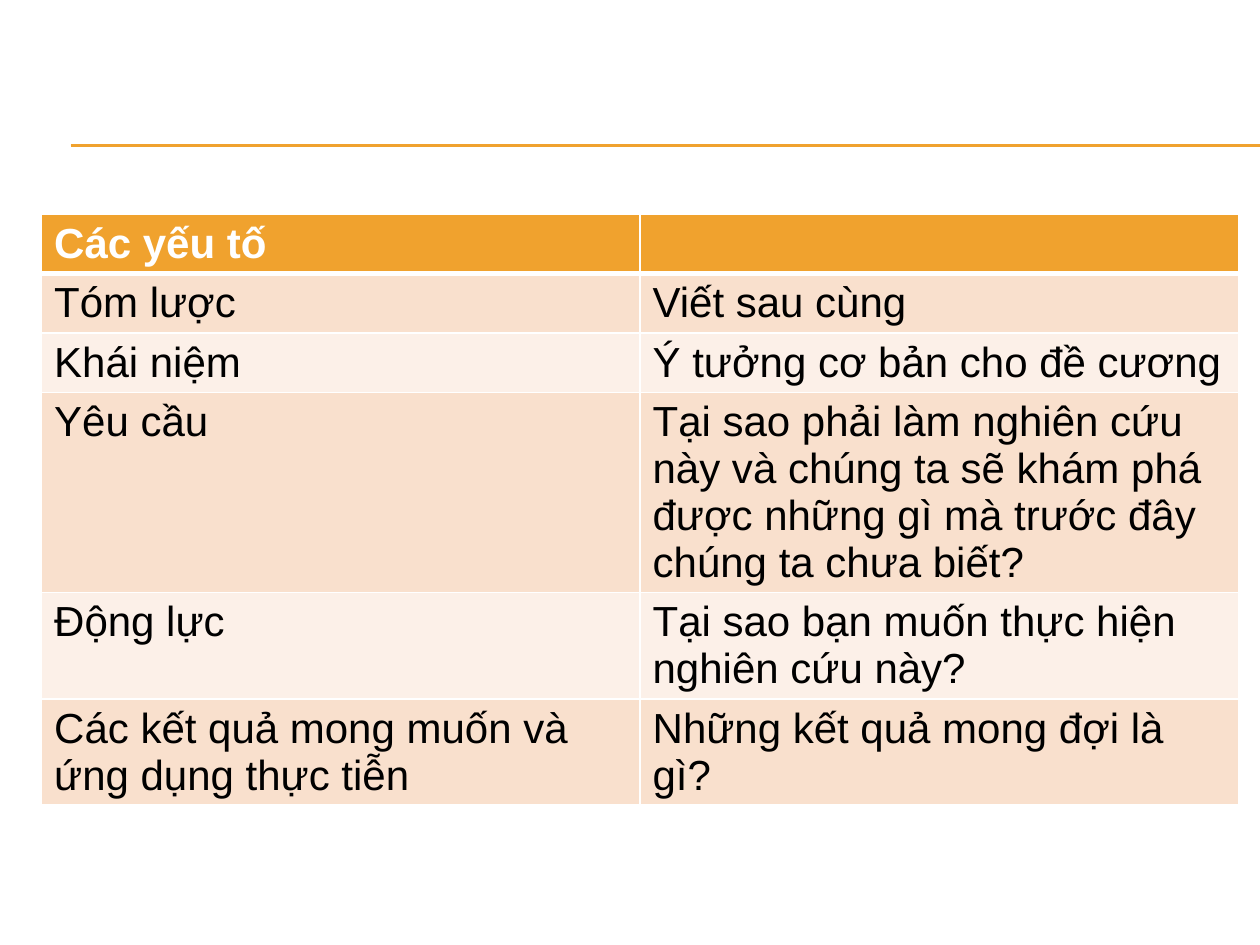
import pptx
import pptx.dml.color
import pptx.enum.shapes
import pptx.oxml.ns
import pptx.util
from lxml import etree
from pptx.dml.color import RGBColor
from pptx.util import Inches

ORANGE = RGBColor(0xF0, 0xA2, 0x2E)
PEACH = RGBColor(0xF9, 0xE0, 0xCD)
CREAM = RGBColor(0xFC, 0xF0, 0xE8)
WHITE = RGBColor(0xFF, 0xFF, 0xFF)
BLACK = RGBColor(0x00, 0x00, 0x00)

FONT = "Arial"
LINE_HEIGHT = 0.37
CELL_PADDING = 0.1

# Each row: element, explanation, number of text lines
ROWS = [
    ("Các yếu tố", "", 1),
    ("Tóm lược", "Viết sau cùng", 1),
    ("Khái niệm", "Ý tưởng cơ bản cho đề cương", 1),
    ("Yêu cầu", "Tại sao phải làm nghiên cứu này và chúng ta sẽ khám phá "
                "được những gì mà trước đây chúng ta chưa biết?", 4),
    ("Động lực", "Tại sao bạn muốn thực hiện nghiên cứu này?", 2),
    ("Các kết quả mong muốn và ứng dụng thực tiễn",
     "Những kết quả mong đợi là gì?", 2),
]


def add_rule(slide, top):
    """Draw a thin horizontal line that runs to the right slide edge."""
    rule = slide.shapes.add_connector(
        pptx.enum.shapes.MSO_CONNECTOR.STRAIGHT,
        Inches(0.56), Inches(top), Inches(10), Inches(top))
    rule.line.color.rgb = ORANGE
    rule.line.width = pptx.util.Pt(0.75)
    etree.SubElement(rule._element.spPr, pptx.oxml.ns.qn("a:effectLst"))


def set_border(cell, side, width):
    """Give one side (L, R, T or B) of a cell a white border."""
    properties = cell._tc.get_or_add_tcPr()
    border = etree.SubElement(
        properties, pptx.oxml.ns.qn("a:ln" + side), w=str(pptx.util.Pt(width)))
    fill = etree.SubElement(border, pptx.oxml.ns.qn("a:solidFill"))
    etree.SubElement(fill, pptx.oxml.ns.qn("a:srgbClr"), val=str(WHITE))


def format_cell(cell, text, row_index):
    is_header = row_index == 0
    # The rule below the header is thicker, on both cells that share it
    widths = {"L": 1, "R": 1,
              "T": 3 if row_index == 1 else 1,
              "B": 3 if is_header else 1}
    for side, width in widths.items():
        set_border(cell, side, width)

    cell.fill.solid()
    if is_header:
        cell.fill.fore_color.rgb = ORANGE
    else:
        cell.fill.fore_color.rgb = PEACH if row_index % 2 else CREAM

    if text:
        run = cell.text_frame.paragraphs[0].add_run()
        run.text = text
        run.font.name = FONT
        run.font.size = pptx.util.Pt(24)
        run.font.bold = is_header
        run.font.color.rgb = WHITE if is_header else BLACK


def add_elements_table(slide):
    heights = [lines * LINE_HEIGHT + CELL_PADDING for *_, lines in ROWS]
    table = slide.shapes.add_table(
        len(ROWS), 2, Inches(0.33), Inches(1.7),
        Inches(9.5), Inches(sum(heights))).table
    for row_index, (element, explanation, _) in enumerate(ROWS):
        table.rows[row_index].height = Inches(heights[row_index])
        for column_index, text in enumerate((element, explanation)):
            format_cell(table.cell(row_index, column_index), text, row_index)


def main():
    presentation = pptx.Presentation()
    presentation.slide_width = Inches(10)
    presentation.slide_height = Inches(7.5)
    # Blank layout: the slide has no title
    slide = presentation.slides.add_slide(presentation.slide_layouts[6])

    # Double rule at the top
    for top in (1.15, 1.16):
        add_rule(slide, top)

    # Proposal elements
    add_elements_table(slide)

    presentation.save("out.pptx")


if __name__ == "__main__":
    main()
